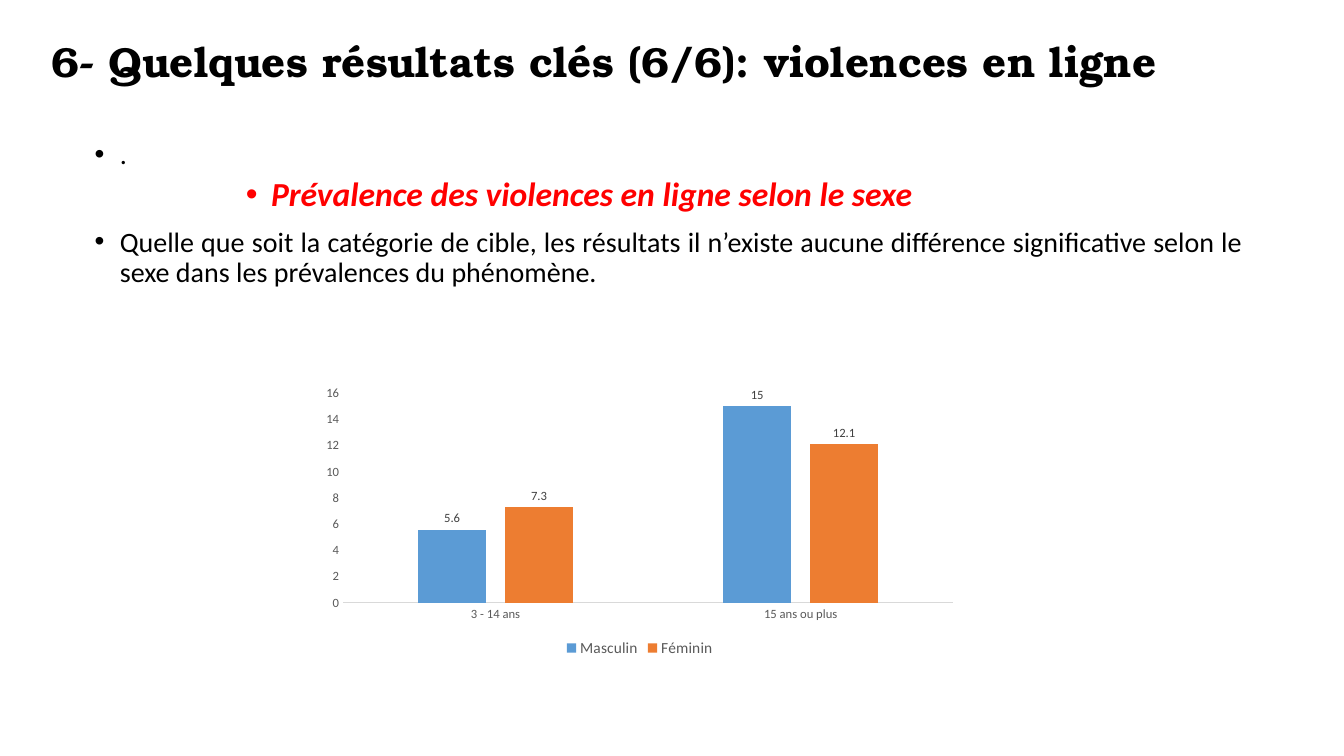
import pptx
import pptx.chart.data
import pptx.dml.color
import pptx.enum.chart
import pptx.enum.text
import pptx.oxml.ns
import pptx.util
from dataclasses import dataclass
from lxml import etree

Inches, Pt = pptx.util.Inches, pptx.util.Pt
ALIGN = pptx.enum.text.PP_ALIGN
ANCHOR = pptx.enum.text.MSO_ANCHOR
SLIDE_WIDTH, SLIDE_HEIGHT = Inches(13.33), Inches(7.5)


@dataclass(frozen=True)
class Theme:
    title_font: str = "TeX Gyre Bonum"
    body_font: str = "Calibri"
    ink: str = "000000"
    accent: str = "FF0000"
    axis_text: str = "595959"
    label_text: str = "404040"
    axis_line: str = "D9D9D9"
    male: str = "5B9BD5"
    female: str = "ED7D31"
    title_size: int = 30
    heading_size: int = 24
    body_size: int = 20
    legend_size: int = 11
    chart_size: int = 9


THEME = Theme()


def rgb(color):
    return pptx.dml.color.RGBColor.from_string(color)


def style_font(font, size, color, name=THEME.body_font, bold=False, italic=False):
    font.size, font.name = Pt(size), name
    font.bold, font.italic = bold, italic
    font.color.rgb = rgb(color)


def area(left, top, width, height):
    """Turn shares of the slide into a position and a size."""
    return (int(left * SLIDE_WIDTH), int(top * SLIDE_HEIGHT),
            int(width * SLIDE_WIDTH), int(height * SLIDE_HEIGHT))


def add_frame(slide, place, anchor=ANCHOR.TOP):
    frame = slide.shapes.add_textbox(*place).text_frame
    frame.word_wrap = True
    frame.vertical_anchor = anchor
    return frame


def add_bullet(paragraph, indent):
    properties = paragraph._p.get_or_add_pPr()
    properties.set("marL", str(Inches(indent)))
    properties.set("indent", str(Inches(-0.25)))
    for tag, key, value in (("a:buFont", "typeface", "Arial"), ("a:buChar", "char", "•")):
        etree.SubElement(properties, pptx.oxml.ns.qn(tag)).set(key, value)


def write(frame, text, first=False, indent=None, before=0, align=ALIGN.LEFT, **font):
    paragraph = frame.paragraphs[0] if first else frame.add_paragraph()
    paragraph.line_spacing = 0.9
    paragraph.space_before = Pt(before)
    paragraph.alignment = align
    if indent is not None:
        add_bullet(paragraph, indent)
    run = paragraph.add_run()
    run.text = text
    style_font(run.font, **font)


def add_prevalence_chart(slide, place, age_groups, prevalence):
    data = pptx.chart.data.CategoryChartData()
    data.categories = age_groups
    for sex, (rates, _) in prevalence.items():
        data.add_series(sex, rates)
    chart = slide.shapes.add_chart(
        pptx.enum.chart.XL_CHART_TYPE.COLUMN_CLUSTERED, *place, data).chart
    chart.has_title = False
    style_font(chart.font, THEME.chart_size, THEME.axis_text)

    # Axes
    for axis in (chart.category_axis, chart.value_axis):
        axis.has_major_gridlines = False
        axis.major_tick_mark = pptx.enum.chart.XL_TICK_MARK.NONE
        axis.minor_tick_mark = pptx.enum.chart.XL_TICK_MARK.NONE
        style_font(axis.tick_labels.font, THEME.chart_size, THEME.axis_text)
    age_line = chart.category_axis.format.line
    age_line.color.rgb = rgb(THEME.axis_line)
    age_line.width = Pt(0.75)
    rate_axis = chart.value_axis
    rate_axis.minimum_scale, rate_axis.maximum_scale, rate_axis.major_unit = 0, 16, 2
    rate_axis.format.line.fill.background()

    # Legend
    chart.has_legend = True
    chart.legend.position = pptx.enum.chart.XL_LEGEND_POSITION.BOTTOM
    chart.legend.include_in_layout = False
    style_font(chart.legend.font, THEME.legend_size, THEME.axis_text)

    # Columns and their values
    plot = chart.plots[0]
    plot.gap_width, plot.overlap = 219, -27
    plot.vary_by_categories = False
    for series, (_, color) in zip(plot.series, prevalence.values()):
        series.format.fill.solid()
        series.format.fill.fore_color.rgb = rgb(color)
        series.invert_if_negative = False
        labels = series.data_labels
        labels.show_value = True
        labels.position = pptx.enum.chart.XL_LABEL_POSITION.OUTSIDE_END
        style_font(labels.font, THEME.chart_size, THEME.label_text)


def main():
    deck = pptx.Presentation()
    deck.slide_width, deck.slide_height = SLIDE_WIDTH, SLIDE_HEIGHT
    slide = deck.slides.add_slide(deck.slide_layouts[6])

    # Title
    title = add_frame(slide, area(0.031, 0.059, 0.863, 0.052), ANCHOR.MIDDLE)
    write(title, "6- Quelques résultats clés (6/6): violences en ligne", first=True,
          size=THEME.title_size, color=THEME.ink, name=THEME.title_font, bold=True)

    # Findings
    findings = add_frame(slide, area(0.063, 0.179, 0.869, 0.801))
    write(findings, ".", first=True, indent=0.25, before=10,
          size=THEME.body_size, color=THEME.ink)
    write(findings, "Prévalence des violences en ligne selon le sexe", indent=1.75, before=5,
          size=THEME.heading_size, color=THEME.accent, bold=True, italic=True)
    write(findings, "Quelle que soit la catégorie de cible, les résultats il n’existe aucune "
          "différence significative selon le sexe dans les prévalences du phénomène.",
          indent=0.25, before=10, align=ALIGN.JUSTIFY,
          size=THEME.body_size, color=THEME.ink)

    # Prevalence by sex and age group
    add_prevalence_chart(
        slide, area(0.233, 0.503, 0.486, 0.372), ["3 - 14 ans", "15 ans ou plus"],
        {"Masculin": ((5.6, 15), THEME.male), "Féminin": ((7.3, 12.1), THEME.female)})

    deck.save("out.pptx")


if __name__ == "__main__":
    main()
